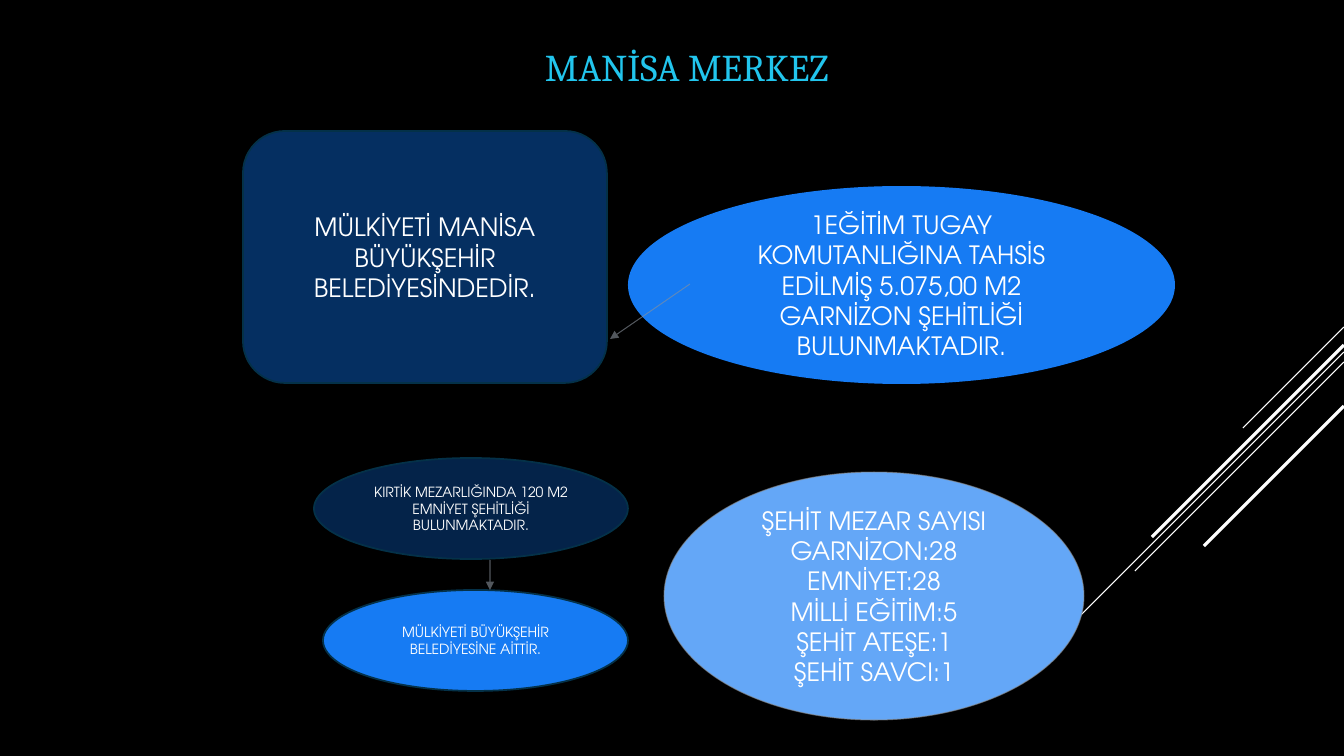
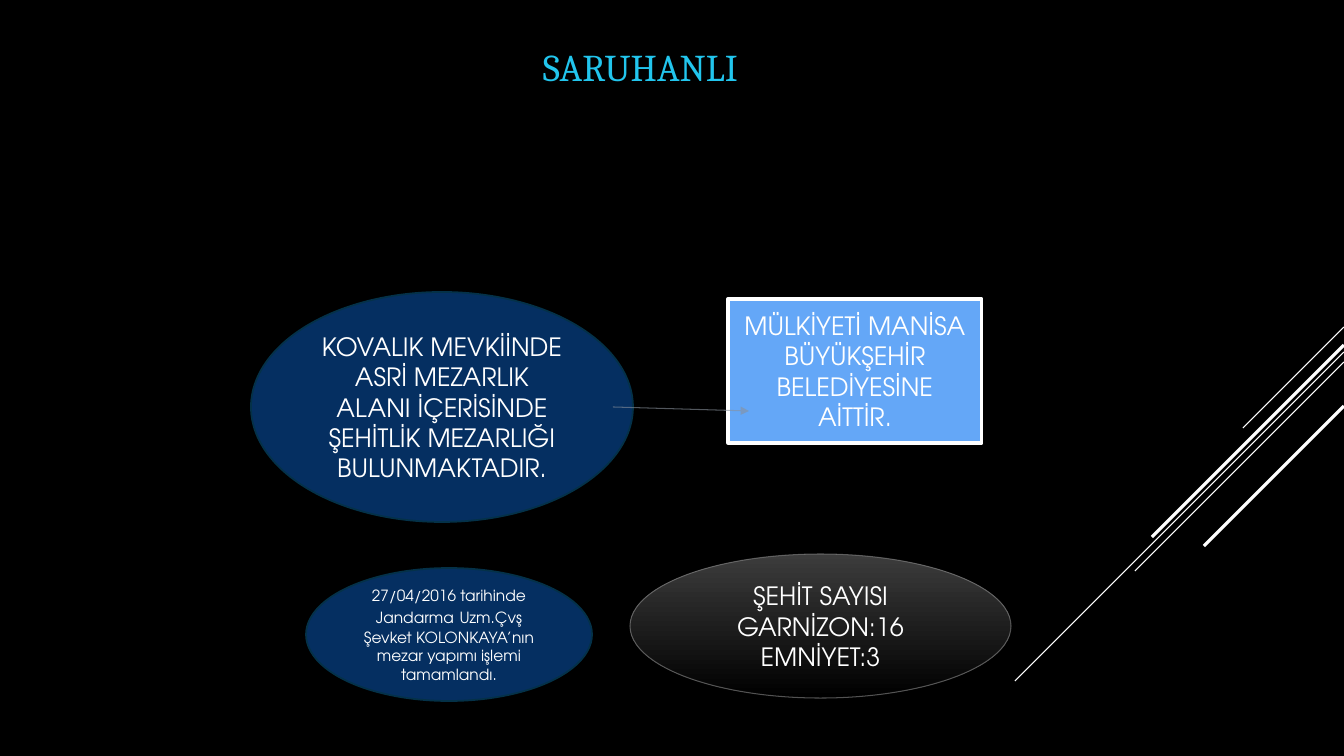
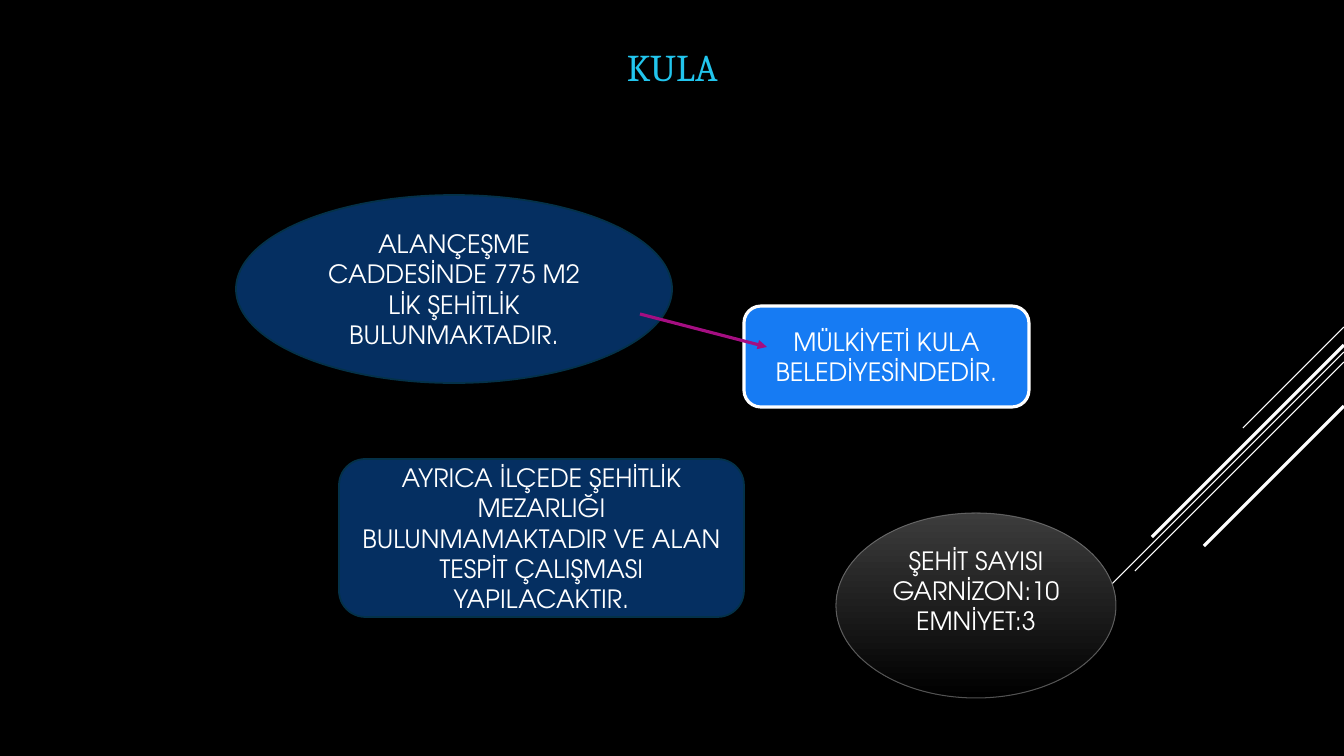
from dataclasses import dataclass
from typing import NamedTuple

from lxml.etree import SubElement
from pptx import Presentation
from pptx.dml.color import RGBColor
from pptx.enum.shapes import MSO_CONNECTOR as Connector, MSO_SHAPE as Preset
from pptx.enum.text import MSO_ANCHOR as Anchor, PP_ALIGN as Align
from pptx.oxml.ns import qn
from pptx.util import Emu, Pt

PX = 914400 / 100.8
SLIDE_WIDTH, SLIDE_HEIGHT = 1344, 756
TITLE_BOX = (269, 31, 865, 63)
BODY_FONT, TITLE_FONT = "TeX Gyre Adventor", "Cambria"
COLORS = {
    "black": "000000",
    "white": "FFFFFF",
    "cyan": "22C5ED",
    "navy": "052F61",
    "midnight": "042349",
    "bright": "167BF3",
    "sky": "64A7F7",
    "charcoal": "3C3C3C",
    "edge": "043148",
    "gray": "898989",
    "steel": "89919C",
    "magenta": "A50E82",
}


class Stroke(NamedTuple):
    color: str
    width: float
    opacity: int = 100


class Run(NamedTuple):
    text: str
    size: int


class Streak(NamedTuple):
    """A 45 degree line that falls leftwards from the right edge."""
    top: int
    reach: int
    width: float


class Style(NamedTuple):
    fills: tuple[str, ...]
    stroke: Stroke | None = None


class Arrow(NamedTuple):
    start: tuple[int, int]
    end: tuple[int, int]
    stroke: Stroke


@dataclass(frozen=True)
class Node:
    preset: Preset
    box: tuple[int, int, int, int]
    style: Style
    paragraphs: tuple[str | tuple[Run, ...], ...]
    size: int = 18
    bottom_inset: int = 5


@dataclass(frozen=True)
class Page:
    title: str
    title_indent: int
    nodes: tuple[Node, ...]
    arrows: tuple[Arrow, ...]


# Shared looks
EDGE, FRAME = Stroke("edge", 1.25), Stroke("white", 2.25)
HAIRLINE, THIN_ARROW = Stroke("gray", 0.75, 60), Stroke("steel", 0.75, 60)
NAVY = Style(("navy",), EDGE)
MIDNIGHT = Style(("midnight",), EDGE)
BRIGHT = Style(("bright",), EDGE)
BRIGHT_PLAIN = Style(("bright",))
BRIGHT_FRAMED = Style(("bright",), FRAME)
SKY = Style(("sky",), HAIRLINE)
SKY_FRAMED = Style(("sky",), FRAME)
SHADED = Style(("charcoal", "black"), HAIRLINE)

STREAKS = (
    Streak(327, 101, 0.75),
    Streak(352, 329, 0.75),
    Streak(362, 209, 0.75),
    Streak(345, 192, 2.25),
    Streak(406, 140, 2.25),
)

# Content
PAGES = (
    Page("MANİSA MERKEZ", 276, (
        Node(Preset.OVAL, (628, 186, 547, 198), BRIGHT_PLAIN,
             ("1EĞİTİM TUGAY KOMUTANLIĞINA TAHSİS EDİLMİŞ 5.075,00 M2 "
              "GARNİZON ŞEHİTLİĞİ BULUNMAKTADIR.",)),
        Node(Preset.ROUNDED_RECTANGLE, (243, 131, 364, 252), NAVY,
             ("MÜLKİYETİ MANİSA BÜYÜKŞEHİR BELEDİYESİNDEDİR.",)),
        Node(Preset.OVAL, (664, 472, 420, 248), SKY,
             ("ŞEHİT MEZAR SAYISI", "GARNİZON:28", "EMNİYET:28",
              "MİLLİ EĞİTİM:5", "ŞEHİT ATEŞE:1", "ŞEHİT SAVCI:1")),
        Node(Preset.OVAL, (323, 590, 305, 101), BRIGHT,
             ("MÜLKİYETİ BÜYÜKŞEHİR BELEDİYESİNE AİTTİR.",), size=10),
        Node(Preset.OVAL, (314, 458, 314, 101), MIDNIGHT,
             ("KIRTİK MEZARLIĞINDA 120 M2 EMNİYET ŞEHİTLİĞİ BULUNMAKTADIR.",),
             size=10),
    ), (
        Arrow((690, 284), (610, 339), THIN_ARROW),
        Arrow((490, 560), (490, 590), THIN_ARROW),
    )),
    Page("SARUHANLI", 274, (
        Node(Preset.OVAL, (251, 292, 382, 230), NAVY,
             ("KOVALIK MEVKİİNDE ASRİ MEZARLIK ALANI İÇERİSİNDE "
              "ŞEHİTLİK MEZARLIĞI BULUNMAKTADIR.",)),
        Node(Preset.RECTANGLE, (728, 299, 254, 144), SKY_FRAMED,
             ("MÜLKİYETİ MANİSA BÜYÜKŞEHİR BELEDİYESİNE AİTTİR.",)),
        Node(Preset.OVAL, (630, 554, 381, 144), SHADED,
             ("ŞEHİT SAYISI", "GARNİZON:16", "EMNİYET:3")),
        Node(Preset.OVAL, (306, 568, 286, 133), NAVY,
             ((Run("27/04/2016 tarihinde Jandarma", 11), Run(" ", 14),
               Run("Uzm.Çvş Şevket KOLONKAYA’nın mezar yapımı işlemi "
                   "tamamlandı.", 11)),)),
    ), (
        Arrow((613, 407), (749, 411), THIN_ARROW),
    )),
    Page("KULA", 358, (
        Node(Preset.OVAL, (236, 195, 436, 188), NAVY,
             ("ALANÇEŞME CADDESİNDE 775 M2 LİK ŞEHİTLİK BULUNMAKTADIR.",)),
        Node(Preset.ROUNDED_RECTANGLE, (744, 306, 285, 101), BRIGHT_FRAMED,
             ("MÜLKİYETİ KULA BELEDİYESİNDEDİR.",)),
        Node(Preset.ROUNDED_RECTANGLE, (339, 459, 405, 158), NAVY,
             ("AYRICA İLÇEDE ŞEHİTLİK MEZARLIĞI BULUNMAMAKTADIR VE ALAN "
              "TESPİT ÇALIŞMASI YAPILACAKTIR.",)),
        Node(Preset.OVAL, (836, 513, 280, 185), SHADED,
             ("ŞEHİT SAYISI", "GARNİZON:10", "EMNİYET:3"), bottom_inset=35),
    ), (
        Arrow((640, 314), (767, 347), Stroke("magenta", 2.25)),
    )),
)


def px(length: int) -> Emu:
    return Emu(round(length * PX))


def rgb(name: str) -> RGBColor:
    return RGBColor.from_string(COLORS[name])


def write_text(shape, paragraphs, *, font=BODY_FONT, size=18, color="white",
               align=Align.CENTER, anchor=Anchor.MIDDLE,
               left_inset=10, bottom_inset=5) -> None:
    frame = shape.text_frame
    frame.word_wrap = True
    frame.vertical_anchor = anchor
    frame.margin_left, frame.margin_right = px(left_inset), px(10)
    frame.margin_top, frame.margin_bottom = px(5), px(bottom_inset)
    for index, content in enumerate(paragraphs):
        paragraph = frame.add_paragraph() if index else frame.paragraphs[0]
        paragraph.alignment = align
        pieces = (Run(content, size),) if isinstance(content, str) else content
        for piece in pieces:
            run = paragraph.add_run()
            run.text = piece.text
            run.font.name, run.font.size = font, Pt(piece.size)
            run.font.color.rgb = rgb(color)


def set_stroke(shape, stroke: Stroke) -> None:
    shape.line.width = Pt(stroke.width)
    shape.line.fill.solid()
    shape.line.fill.fore_color.rgb = rgb(stroke.color)
    if stroke.opacity < 100:
        color = shape.element.xpath(".//a:ln//a:srgbClr")[0]
        SubElement(color, qn("a:alpha"), val=str(stroke.opacity * 1000))


def add_line(slide, start, end, stroke: Stroke, arrowhead=False) -> None:
    line = slide.shapes.add_connector(
        Connector.STRAIGHT, *map(px, (*start, *end)))
    set_stroke(line, stroke)
    if arrowhead:
        outline = line.element.xpath(".//a:ln")[0]
        SubElement(outline, qn("a:tailEnd"), type="triangle")
    SubElement(line.element.spPr, qn("a:effectLst"))


def add_node(slide, node: Node) -> None:
    shape = slide.shapes.add_shape(node.preset, *map(px, node.box))
    shape.shadow.inherit = False
    fills, stroke = node.style
    if len(fills) == 1:
        shape.fill.solid()
        shape.fill.fore_color.rgb = rgb(fills[0])
    else:
        shape.fill.gradient()
        shape.fill.gradient_angle = 270
        for position, (stop, name) in enumerate(
                zip(shape.fill.gradient_stops, fills)):
            stop.position = position
            stop.color.rgb = rgb(name)
    if stroke:
        set_stroke(shape, stroke)
    else:
        shape.line.fill.background()
    write_text(shape, node.paragraphs, size=node.size,
               bottom_inset=node.bottom_inset)


def add_page(presentation, page: Page) -> None:
    slide = presentation.slides.add_slide(presentation.slide_layouts[6])
    # Streaks behind everything
    for top, reach, width in STREAKS:
        add_line(slide, (SLIDE_WIDTH, top), (SLIDE_WIDTH - reach, top + reach),
                 Stroke("white", width))
    # Title
    title = slide.shapes.add_textbox(*map(px, TITLE_BOX))
    write_text(title, (page.title,), font=TITLE_FONT, size=27, color="cyan",
               align=Align.LEFT, anchor=Anchor.BOTTOM,
               left_inset=page.title_indent)
    # Statements and the arrows over them
    for node in page.nodes:
        add_node(slide, node)
    for start, end, stroke in page.arrows:
        add_line(slide, start, end, stroke, arrowhead=True)


def main() -> None:
    presentation = Presentation()
    presentation.slide_width = px(SLIDE_WIDTH)
    presentation.slide_height = px(SLIDE_HEIGHT)
    background = presentation.slide_master.background.fill
    background.solid()
    background.fore_color.rgb = rgb("black")
    for page in PAGES:
        add_page(presentation, page)
    presentation.save("out.pptx")


if __name__ == "__main__":
    main()
